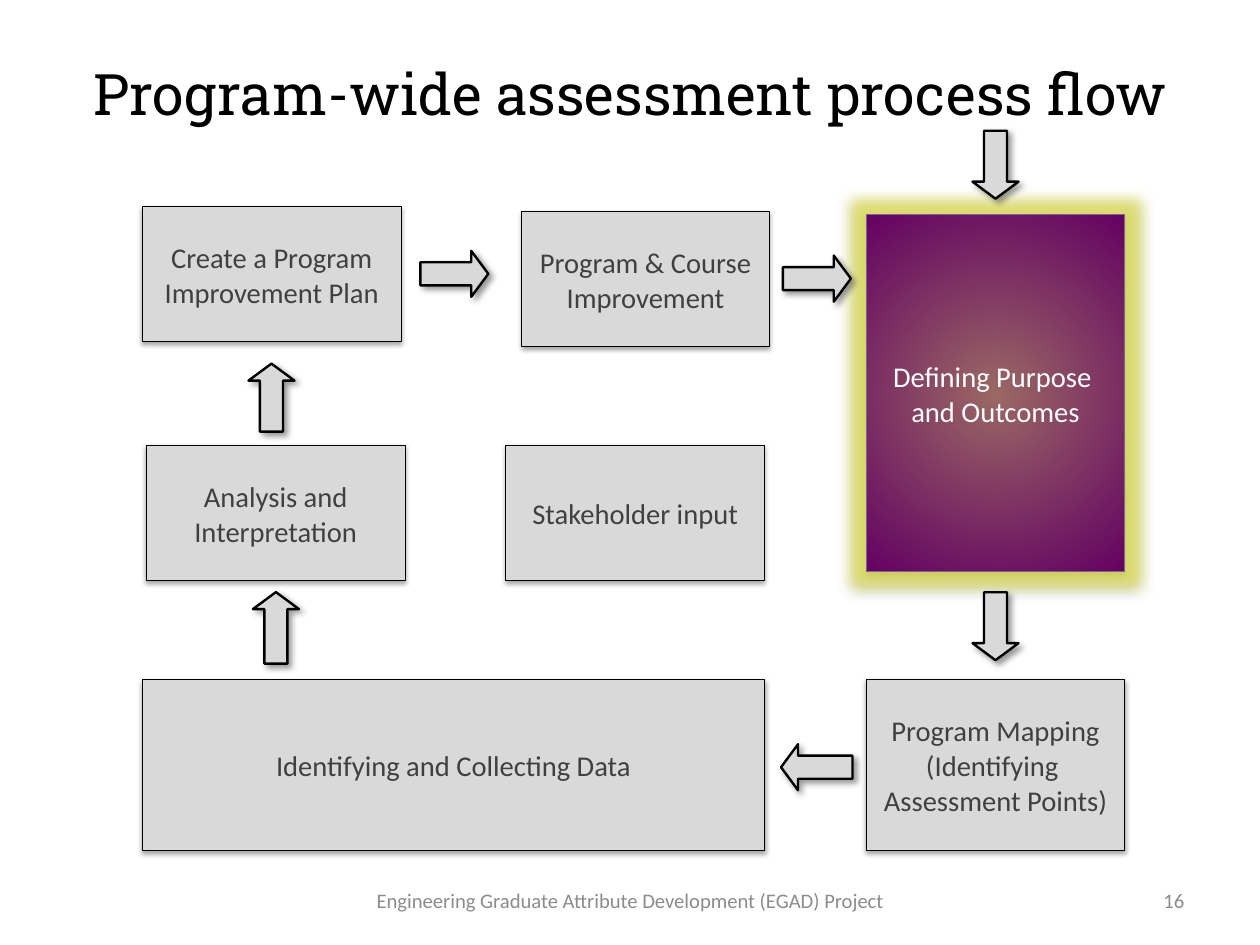
from pptx import Presentation
from pptx.dml.color import RGBColor
from pptx.enum.shapes import MSO_SHAPE
from pptx.enum.text import MSO_ANCHOR, PP_ALIGN
from pptx.oxml import parse_xml
from pptx.oxml.ns import nsdecls, qn
from pptx.util import Pt

# Content
TITLE = "Program-wide assessment process flow"
FOOTER = "Engineering Graduate Attribute Development (EGAD) Project"
PAGE_NUMBER = "16"

BLACK = RGBColor(0x00, 0x00, 0x00)
WHITE = RGBColor(0xFF, 0xFF, 0xFF)
LIGHT_GREY = RGBColor(0xD9, 0xD9, 0xD9)
DARK_GREY = RGBColor(0x40, 0x40, 0x40)
FOOTER_GREY = RGBColor(0x8C, 0x8C, 0x8C)
PURPLE = RGBColor(0x64, 0x00, 0x64)
VIOLET = RGBColor(0x7D, 0x60, 0xA0)
YELLOW = RGBColor(0xE6, 0xE6, 0x32)

# Grid of the flow, in points
SLIDE_WIDTH, SLIDE_HEIGHT = 793.7, 595.28
STEP_WIDTH, STEP_HEIGHT = 163, 85
LEFT, RIGHT = 89.7, 545.6
MIDDLE_TOP = 280.6
BOTTOM_TOP, BOTTOM_HEIGHT = 427.8, 107.8
ARROW_LENGTH, ARROW_WIDTH = 42.8, 29
RIGHT_MIDDLE = RIGHT + STEP_WIDTH / 2

CURRENT_STEP = (["Defining Purpose ", "and Outcomes"], RIGHT, 135.2, STEP_WIDTH, 224.7)
STEPS = [  # lines, left, top, width, height
    (["Program Mapping", "(Identifying ", "Assessment Points)"],
     RIGHT, BOTTOM_TOP, STEP_WIDTH, BOTTOM_HEIGHT),
    (["Stakeholder input"], 318.6, MIDDLE_TOP, STEP_WIDTH, STEP_HEIGHT),
    (["Identifying and Collecting Data"], LEFT, BOTTOM_TOP, 392, BOTTOM_HEIGHT),
    (["Analysis and", "Interpretation"], 92.2, MIDDLE_TOP, STEP_WIDTH, STEP_HEIGHT),
    (["Create a Program", "Improvement Plan"], LEFT, 130, STEP_WIDTH, STEP_HEIGHT),
    (["Program & Course", "Improvement"], 328.8, 133.2, 155.8, STEP_HEIGHT),
]
ARROWS = [  # shape, centre x, centre y, length
    (MSO_SHAPE.DOWN_ARROW, RIGHT_MIDDLE, 394.5, ARROW_LENGTH),
    (MSO_SHAPE.LEFT_ARROW, 514.5, 483.3, 45),
    (MSO_SHAPE.UP_ARROW, 173.8, 395.5, 45),
    (MSO_SHAPE.UP_ARROW, 171, 250.5, ARROW_LENGTH),
    (MSO_SHAPE.DOWN_ARROW, RIGHT_MIDDLE, 103.8, ARROW_LENGTH),
    (MSO_SHAPE.RIGHT_ARROW, 286.2, 172.5, ARROW_LENGTH),
    (MSO_SHAPE.RIGHT_ARROW, 514.6, 175.5, ARROW_LENGTH),
]
STEP_SHADOW = (35, 3.1, 1.8, 90)  # opacity, blur, distance, angle
ARROW_SHADOW = (40, 4, 3, 45)


def add_effect(shape, xml):
    shape.shadow.inherit = False
    shape._element.spPr.find(qn("a:effectLst")).append(parse_xml(xml))


def add_shadow(shape, opacity, blur, distance, angle):
    add_effect(shape, f'<a:outerShdw {nsdecls("a")} blurRad="{Pt(blur)}" '
               f'dist="{Pt(distance)}" dir="{angle * 60000}" rotWithShape="0">'
               f'<a:srgbClr val="{BLACK}"><a:alpha val="{opacity * 1000}"/>'
               '</a:srgbClr></a:outerShdw>')


def add_glow(shape, radius, opacity):
    add_effect(shape, f'<a:glow {nsdecls("a")} rad="{Pt(radius)}">'
               f'<a:srgbClr val="{YELLOW}"><a:alpha val="{opacity * 1000}"/>'
               '</a:srgbClr></a:glow>')


def fill_radial(shape):
    shape.fill.gradient()
    properties = shape._element.spPr
    properties.replace(properties.find(qn("a:gradFill")), parse_xml(
        f'<a:gradFill {nsdecls("a")} rotWithShape="1"><a:gsLst>'
        f'<a:gs pos="0"><a:srgbClr val="{PURPLE}"><a:alpha val="50000"/></a:srgbClr></a:gs>'
        f'<a:gs pos="100000"><a:srgbClr val="{PURPLE}"/></a:gs></a:gsLst>'
        '<a:path path="circle"><a:fillToRect l="50000" t="50000" r="50000" b="50000"/>'
        '</a:path></a:gradFill>'))


def add_block(page, kind, left, top, width, height, line_color, line_width):
    shape = page.shapes.add_shape(kind, Pt(left), Pt(top), Pt(width), Pt(height))
    shape.fill.solid()
    shape.fill.fore_color.rgb = LIGHT_GREY
    shape.line.color.rgb = line_color
    shape.line.width = Pt(line_width)
    return shape


def write(shape, lines, size, color, align, font="Calibri", spacing=None):
    frame = shape.text_frame
    frame.vertical_anchor = MSO_ANCHOR.MIDDLE
    frame.text = "\n".join(lines)
    for para in frame.paragraphs:
        para.alignment = align
        para.line_spacing = spacing
        para.font.size = Pt(size)
        para.font.name = font
        para.font.color.rgb = color


def add_step(page, step, line_color=BLACK, text_color=DARK_GREY):
    lines, *place = step
    box = add_block(page, MSO_SHAPE.FLOWCHART_PROCESS, *place, line_color, 0.75)
    box.text_frame.word_wrap = False
    write(box, lines, 18, text_color, PP_ALIGN.CENTER, spacing=1.02)
    return box


def add_arrow(page, kind, center_x, center_y, length):
    vertical = kind in (MSO_SHAPE.UP_ARROW, MSO_SHAPE.DOWN_ARROW)
    width, height = (ARROW_WIDTH, length) if vertical else (length, ARROW_WIDTH)
    arrow = add_block(page, kind, center_x - width / 2, center_y - height / 2,
                      width, height, BLACK, 1.5)
    arrow.adjustments[0] = 0.5
    arrow.adjustments[1] = 0.37
    add_shadow(arrow, *ARROW_SHADOW)


def add_footer(page, text, left, width, align):
    box = page.shapes.add_textbox(Pt(left), Pt(551.5), Pt(width), Pt(31.5))
    box.text_frame.word_wrap = True
    box.text_frame.margin_left = box.text_frame.margin_right = Pt(8)
    write(box, [text], 13, FOOTER_GREY, align)


def main():
    deck = Presentation()
    deck.slide_width, deck.slide_height = Pt(SLIDE_WIDTH), Pt(SLIDE_HEIGHT)
    page = deck.slides.add_slide(deck.slide_layouts[5])

    # Title
    title = page.shapes.title
    title.left, title.top, title.width, title.height = Pt(39.7), Pt(8.5), Pt(714.3), Pt(99.5)
    write(title, [TITLE], 36, BLACK, PP_ALIGN.CENTER, font="Roboto Slab")

    # Footer
    add_footer(page, FOOTER, 221, 351.5, PP_ALIGN.CENTER)
    add_footer(page, PAGE_NUMBER, 569, 185, PP_ALIGN.RIGHT)

    # Highlighted step
    current = add_step(page, CURRENT_STEP, VIOLET, WHITE)
    fill_radial(current)
    add_glow(current, 18, 60)
    add_shadow(current, *STEP_SHADOW)

    # Other steps and the arrows between them
    for step in STEPS:
        add_shadow(add_step(page, step), *STEP_SHADOW)
    for arrow in ARROWS:
        add_arrow(page, *arrow)

    deck.save("out.pptx")


if __name__ == "__main__":
    main()
